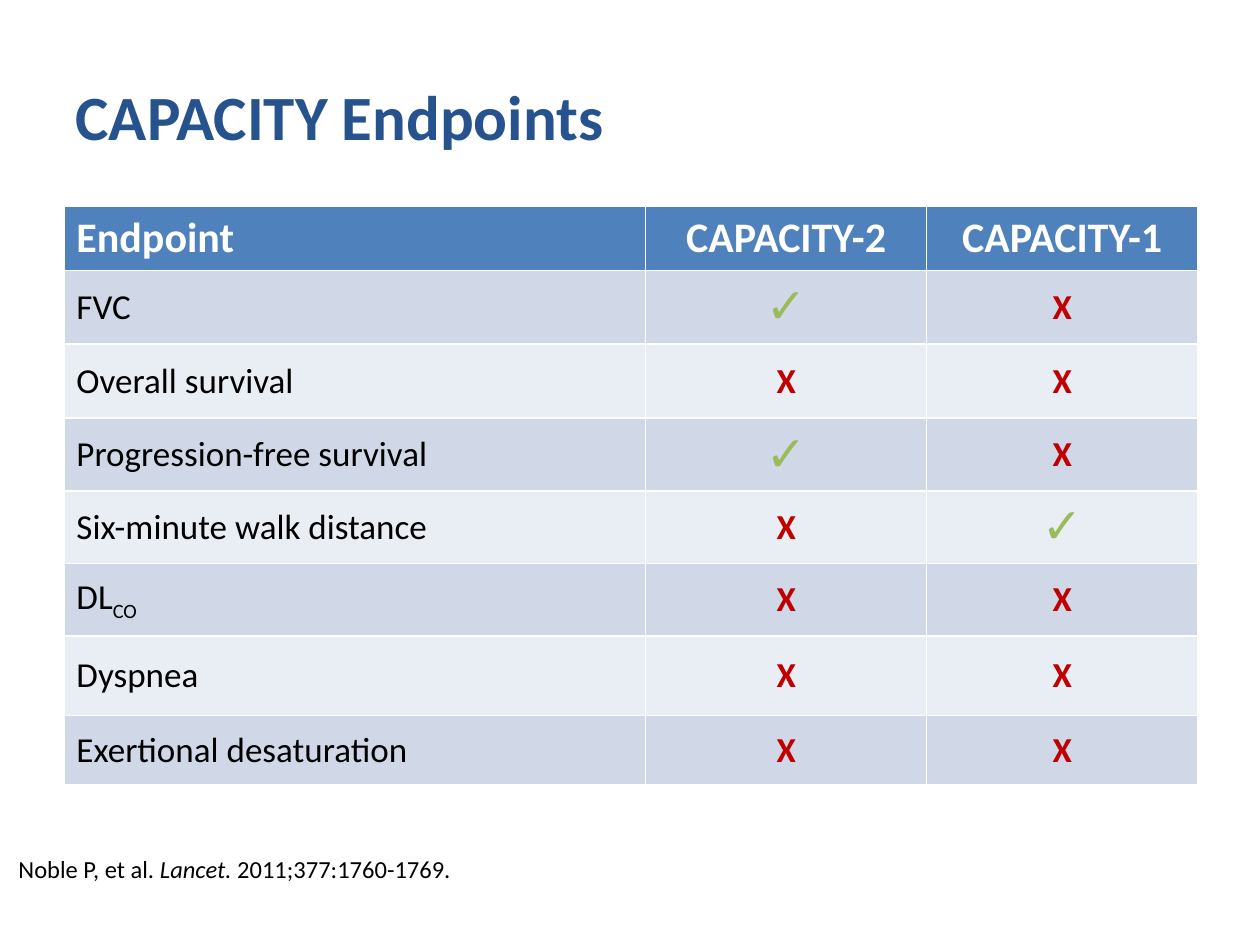
from pptx import Presentation
from pptx import util as u
from pptx.dml import color
from pptx.enum import text

FONT = "Calibri"
TITLE = "CAPACITY Endpoints"
HEADER = ("Endpoint", "CAPACITY-2", "CAPACITY-1")
ENDPOINTS = [
    ("FVC", "✓", "X"),
    ("Overall survival", "X", "X"),
    ("Progression-free survival", "✓", "X"),
    ("Six-minute walk distance", "X", "✓"),
    ("DL|CO", "X", "X"),
    ("Dyspnea", "X", "X"),
    ("Exertional desaturation", "X", "X"),
]
CITATION = [("Noble P, et al. ", False), ("Lancet.", True), (" 2011;377:1760-1769.", False)]
COLUMN_WIDTHS = (332.5, 160.5, 155)
ROW_HEIGHTS = (36, 42, 42.5, 41.5, 41.5, 41.5, 45.5, 39.5)
HEADER_FILL = "4F81BD"
BAND_FILLS = ("D0D8E8", "E9EDF4")
MARKS = {"✓": (28, "9BBB59"), "X": (20, "C00000")}


def style(font, size, hex_color, bold=False):
    font.name = FONT
    font.size = u.Pt(size)
    font.bold = bold
    font.color.rgb = color.RGBColor.from_string(hex_color)


def fill_cell(cell, label, fill, size, hex_color, bold, centered):
    cell.fill.solid()
    cell.fill.fore_color.rgb = color.RGBColor.from_string(fill)
    para = cell.text_frame.paragraphs[0]
    para.alignment = text.PP_ALIGN.CENTER if centered else text.PP_ALIGN.LEFT
    for index, part in enumerate(label.split("|")):
        span = para.add_run()
        span.text = part
        style(span.font, size, hex_color, bold)
        if index:
            span.font._element.set("baseline", "-25000")


def add_title(page):
    title = page.shapes.title
    title.left, title.top, title.width, title.height = map(u.Pt, (36, 21, 648, 90))
    title.text_frame.text = TITLE
    title.text_frame.vertical_anchor = text.MSO_ANCHOR.MIDDLE
    para = title.text_frame.paragraphs[0]
    para.alignment = text.PP_ALIGN.LEFT
    style(para.runs[0].font, 36, "26528E", True)


def add_endpoints(page):
    table = page.shapes.add_table(
        len(ROW_HEIGHTS), len(COLUMN_WIDTHS), u.Pt(36.5), u.Pt(118),
        u.Pt(sum(COLUMN_WIDTHS)), u.Pt(sum(ROW_HEIGHTS))).table
    for column, width in zip(table.columns, COLUMN_WIDTHS):
        column.width = u.Pt(width)
    for row, height in zip(table.rows, ROW_HEIGHTS):
        row.height = u.Pt(height)
    for col, label in enumerate(HEADER):
        fill_cell(table.cell(0, col), label, HEADER_FILL, 24, "FFFFFF", True, col > 0)
    for row, labels in enumerate(ENDPOINTS, 1):
        for col, label in enumerate(labels):
            cell = table.cell(row, col)
            size, hex_color = MARKS.get(label, (20, "000000"))
            fill_cell(cell, label, BAND_FILLS[(row - 1) % 2], size, hex_color, col > 0, col > 0)
            cell.vertical_anchor = text.MSO_ANCHOR.MIDDLE


def add_citation(page):
    box = page.shapes.add_textbox(u.Pt(3.5), u.Pt(484.5), u.Pt(263.5), u.Pt(24.5))
    box.text_frame.word_wrap = False
    box.text_frame.auto_size = text.MSO_AUTO_SIZE.SHAPE_TO_FIT_TEXT
    for part, italic in CITATION:
        span = box.text_frame.paragraphs[0].add_run()
        span.text = part
        style(span.font, 14, "000000")
        span.font.italic = italic


def main():
    deck = Presentation()
    deck.slide_width, deck.slide_height = u.Pt(720), u.Pt(540)
    page = deck.slides.add_slide(deck.slide_layouts[5])
    add_title(page)
    add_endpoints(page)
    add_citation(page)
    deck.save("out.pptx")


if __name__ == "__main__":
    main()
